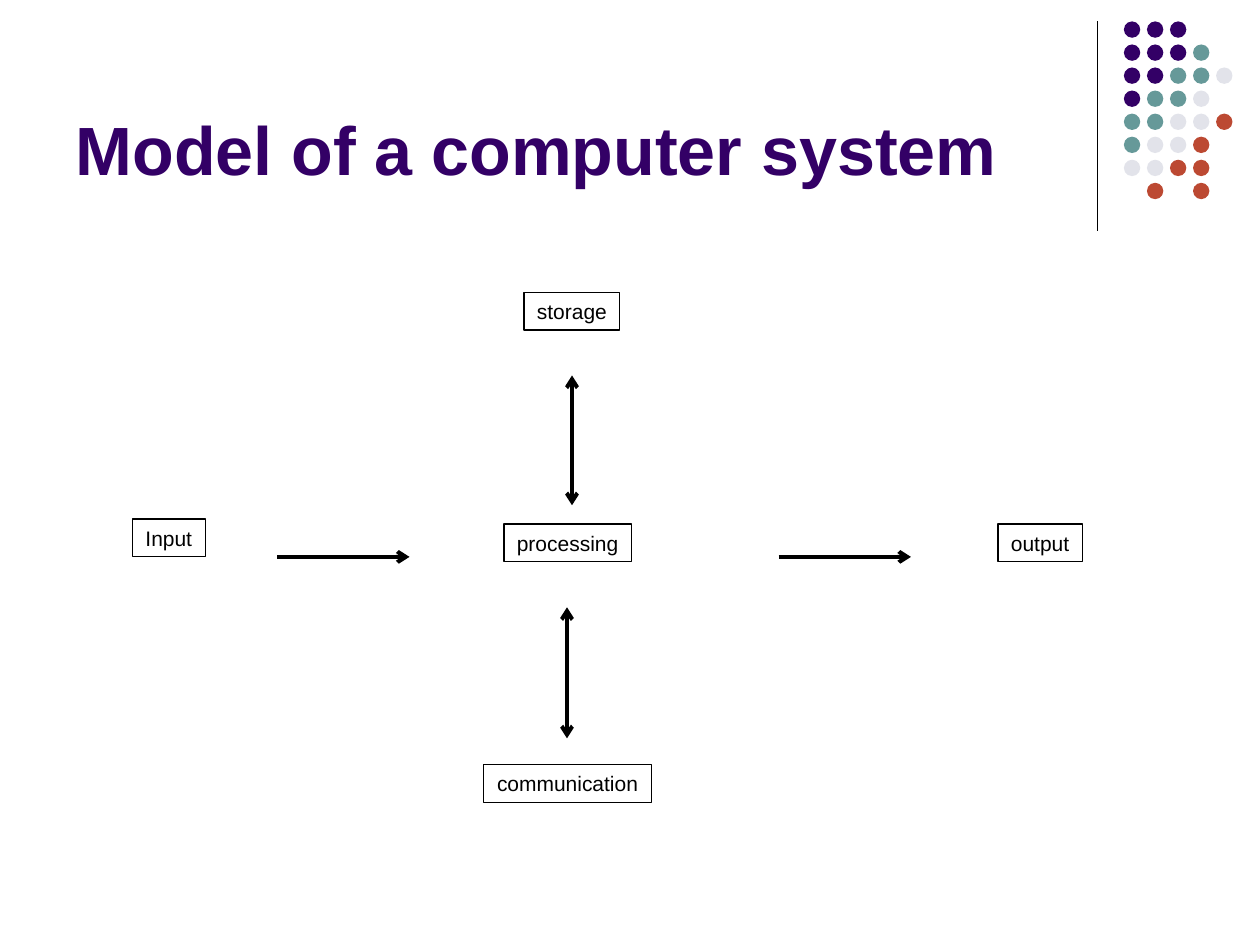
from dataclasses import dataclass

from lxml.etree import SubElement
from pptx import Presentation
from pptx.dml.color import RGBColor
from pptx.enum.shapes import MSO_CONNECTOR, MSO_SHAPE
from pptx.enum.text import MSO_ANCHOR, MSO_AUTO_SIZE, PP_ALIGN
from pptx.oxml.ns import qn
from pptx.util import Inches, Pt


@dataclass(frozen=True)
class Theme:
    font: str = "Arial"
    title_size: int = 39
    label_size: int = 12
    ink: str = "000000"
    purple: str = "330066"
    teal: str = "669999"
    grey: str = "E2E3EA"
    rust: str = "BC4932"
    thin: float = 0.75
    thick: float = 2.25


class SlideBuilder:
    def __init__(self, slide, theme):
        self.slide = slide
        self.theme = theme

    def add_run(self, paragraph, text, size, color, bold=False):
        run = paragraph.add_run()
        run.text = text
        run.font.name = self.theme.font
        run.font.size = Pt(size)
        run.font.bold = bold
        run.font.color.rgb = RGBColor.from_string(color)

    def title(self, text, left, top, width, height):
        heading = self.slide.shapes.title
        heading.left, heading.top = Inches(left), Inches(top)
        heading.width, heading.height = Inches(width), Inches(height)
        frame = heading.text_frame
        frame.auto_size = MSO_AUTO_SIZE.NONE
        frame.vertical_anchor = MSO_ANCHOR.BOTTOM
        paragraph = frame.paragraphs[0]
        paragraph.alignment = PP_ALIGN.LEFT
        self.add_run(paragraph, text, self.theme.title_size, self.theme.purple, bold=True)

    def line(self, start, end, weight, head=False, tail=False):
        """Draw a line; head puts an arrowhead at the start, tail at the end."""
        connector = self.slide.shapes.add_connector(
            MSO_CONNECTOR.STRAIGHT, *map(Inches, start + end))
        connector.line.color.rgb = RGBColor.from_string(self.theme.ink)
        connector.line.width = Pt(weight)
        outline = connector.line._get_or_add_ln()
        for wanted, tag in ((head, "a:headEnd"), (tail, "a:tailEnd")):
            if wanted:
                SubElement(outline, qn(tag), type="arrow")
        SubElement(connector._element.spPr, qn("a:effectLst"))

    def dot_pattern(self, rows, left, top, pitch, diameter):
        """Draw one dot per letter of rows; a full stop leaves a gap."""
        colors = {"P": self.theme.purple, "T": self.theme.teal,
                  "G": self.theme.grey, "R": self.theme.rust}
        group = self.slide.shapes.add_group_shape()
        for row, letters in enumerate(rows):
            for column, letter in enumerate(letters):
                if letter not in colors:
                    continue
                dot = group.shapes.add_shape(
                    MSO_SHAPE.OVAL, Inches(left + column * pitch),
                    Inches(top + row * pitch), Inches(diameter), Inches(diameter))
                dot.shadow.inherit = False
                dot.fill.solid()
                dot.fill.fore_color.rgb = RGBColor.from_string(colors[letter])
                dot.line.fill.background()

    def label_box(self, text, left, top, width, height=0.3):
        box = self.slide.shapes.add_shape(
            MSO_SHAPE.RECTANGLE, Inches(left), Inches(top), Inches(width), Inches(height))
        box.shadow.inherit = False
        box.fill.background()
        box.line.color.rgb = RGBColor.from_string(self.theme.ink)
        box.line.width = Pt(self.theme.thin)
        frame = box.text_frame
        frame.word_wrap = False
        frame.auto_size = MSO_AUTO_SIZE.SHAPE_TO_FIT_TEXT
        frame.vertical_anchor = MSO_ANCHOR.TOP
        paragraph = frame.paragraphs[0]
        paragraph.alignment = PP_ALIGN.CENTER
        self.add_run(paragraph, text, self.theme.label_size, self.theme.ink)


DOT_ROWS = ("PPP", "PPPT", "PPTTG", "PTTG", "TTGGR", "TGGR", "GGRR", ".R.R")

COMPONENTS = (
    ("Input", 1.05, 4.12, 0.58),
    ("storage", 4.16, 2.32, 0.76),
    ("output", 7.92, 4.16, 0.67),
    ("processing", 4, 4.16, 1.01),
    ("communication", 3.84, 6.07, 1.33),
)

ONE_WAY_FLOWS = (((2.2, 4.42), (3.25, 4.42)), ((6.18, 4.42), (7.23, 4.42)))
TWO_WAY_FLOWS = (((4.54, 2.98), (4.54, 4.01)), ((4.5, 4.82), (4.5, 5.86)))


def main():
    presentation = Presentation()
    presentation.slide_width = Inches(10)
    presentation.slide_height = Inches(7.5)
    title_only = presentation.slide_layouts[5]
    theme = Theme()
    builder = SlideBuilder(presentation.slides.add_slide(title_only), theme)

    builder.line((8.71, 0.17), (8.71, 1.83), theme.thin)
    builder.dot_pattern(DOT_ROWS, left=8.92, top=0.17, pitch=0.183, diameter=0.13)
    builder.title("Model of a computer system", 0.5, 0.13, 8.25, 1.42)
    for component in COMPONENTS:
        builder.label_box(*component)
    for start, end in ONE_WAY_FLOWS:
        builder.line(start, end, theme.thick, tail=True)
    for start, end in TWO_WAY_FLOWS:
        builder.line(start, end, theme.thick, head=True, tail=True)

    presentation.save("out.pptx")


if __name__ == "__main__":
    main()
